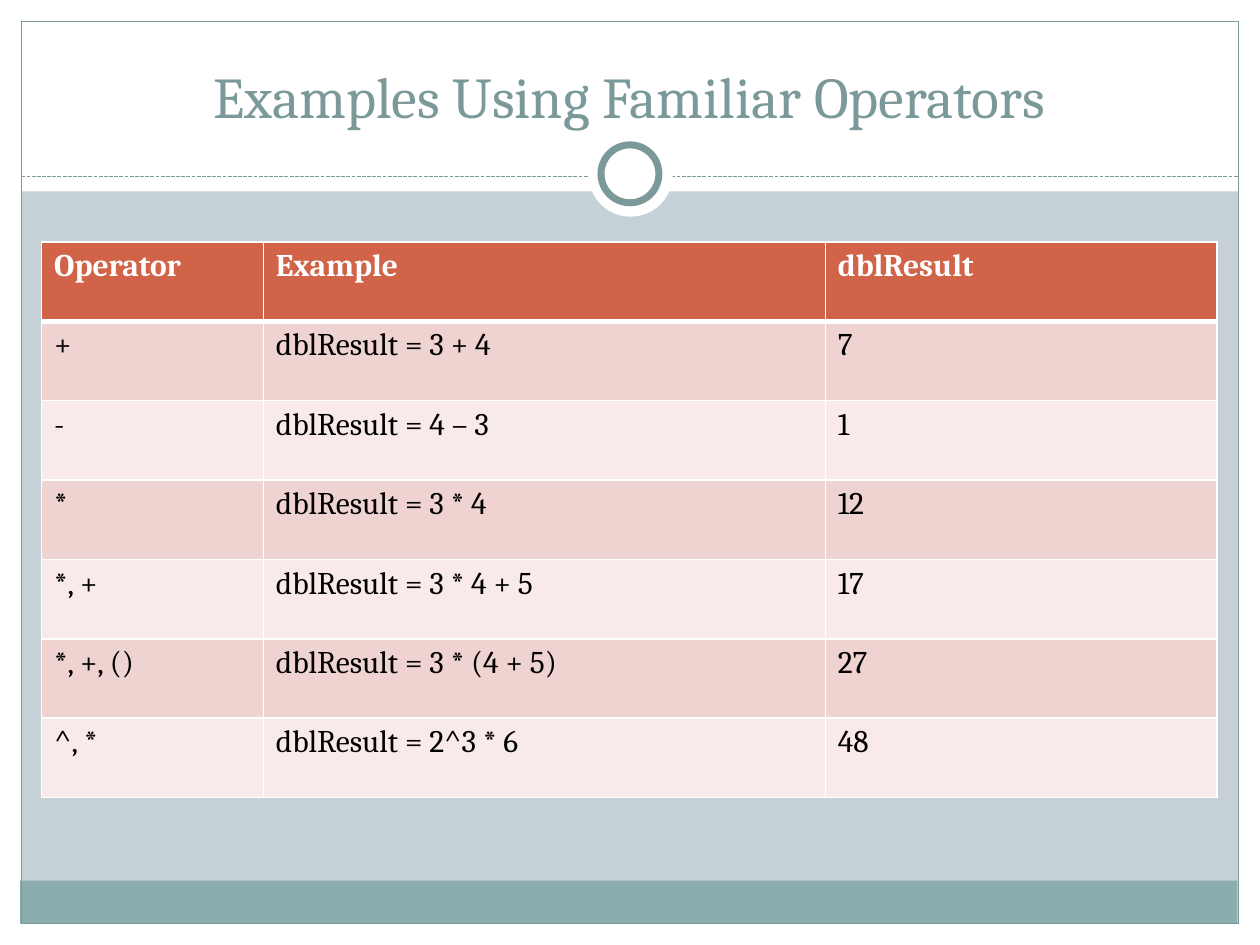
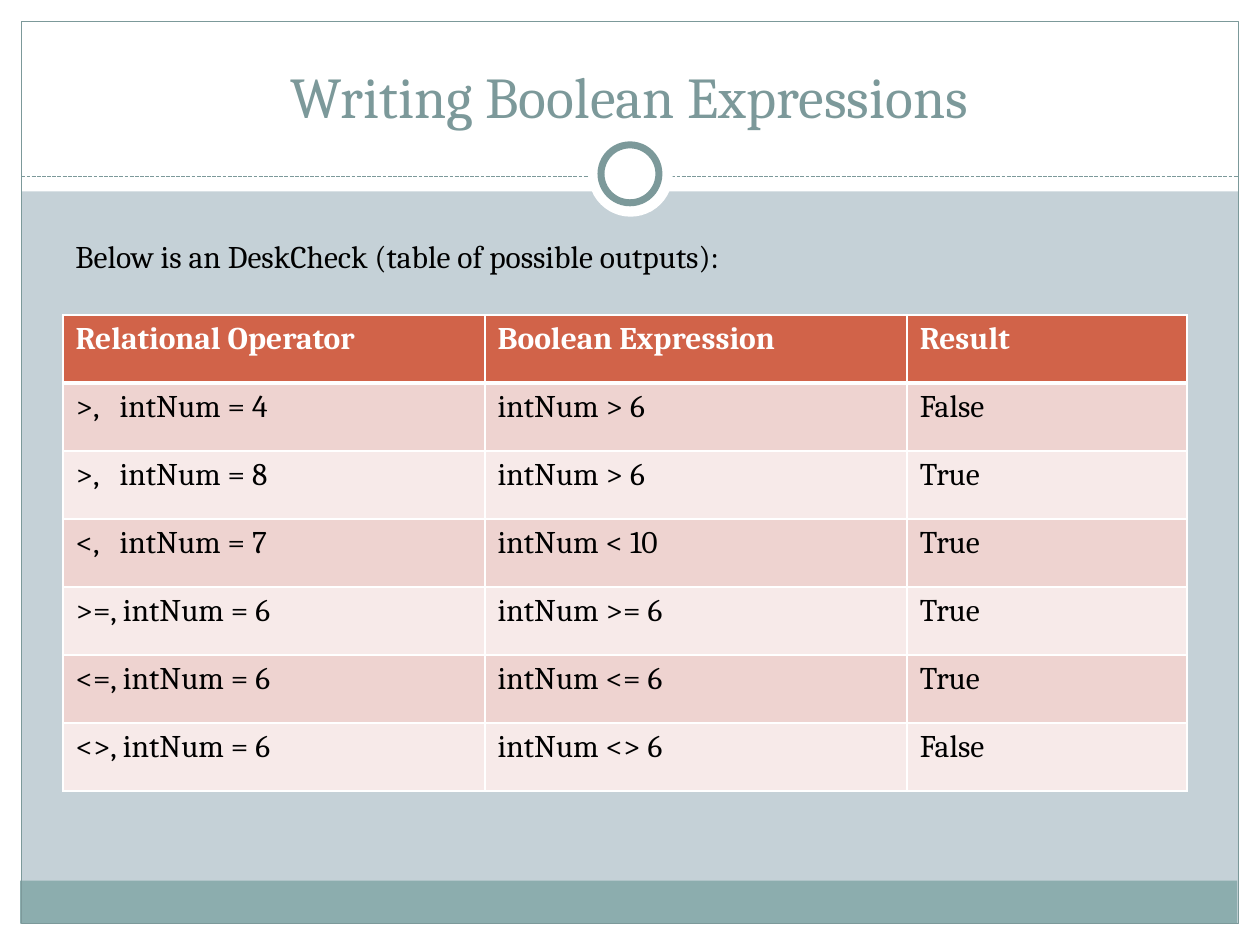
"""Build two slides with tables of arithmetic and relational operators."""
from lxml.etree import SubElement
from pptx import Presentation
from pptx.dml.color import RGBColor
from pptx.enum.dml import MSO_LINE
from pptx.enum.shapes import MSO_CONNECTOR, MSO_SHAPE
from pptx.enum.text import MSO_ANCHOR, MSO_AUTO_SIZE, PP_ALIGN
from pptx.oxml import parse_xml
from pptx.oxml.ns import nsdecls, qn
from pptx.util import Inches, Pt

FONT = "Cambria"
WHITE = RGBColor(0xFF, 0xFF, 0xFF)
BLACK = RGBColor(0x00, 0x00, 0x00)
BACKDROP = RGBColor(0xC5, 0xD1, 0xD7)
TEAL = RGBColor(0x7C, 0x99, 0x9A)
FOOTER_TEAL = RGBColor(0x8C, 0xAD, 0xAE)
HEADER_RED = RGBColor(0xD1, 0x63, 0x49)
ROW_TINTS = [RGBColor(0xF7, 0xEA, 0xE9), RGBColor(0xEE, 0xD3, 0xD0)]

DECOR = [
    (MSO_SHAPE.RECTANGLE, (0, 7.33, 10, 0.17), WHITE, None),
    (MSO_SHAPE.RECTANGLE, (0, 0, 10, 1.52), WHITE, None),
    (MSO_SHAPE.RECTANGLE, (0, 0, 0.17, 7.5), WHITE, None),
    (MSO_SHAPE.RECTANGLE, (9.83, 0, 0.17, 7.5), WHITE, None),
    (MSO_SHAPE.RECTANGLE, (0.16, 6.99, 9.66, 0.34), FOOTER_TEAL, None),
    (MSO_SHAPE.RECTANGLE, (0.17, 0.17, 9.66, 7.16), None, 0.75),
    (MSO_SHAPE.OVAL, (4.67, 1.05, 0.67, 0.67), WHITE, None),
    (MSO_SHAPE.OVAL, (4.77, 1.15, 0.46, 0.46), WHITE, 4),
]

SLIDES = [
    {
        "title": "Examples Using Familiar Operators",
        "intro": None,
        "origin": (0.33, 1.92),
        "columns": [1.76, 4.46, 3.11],
        "row_height": 0.63,
        "rows": [
            ("Operator", "Example", "dblResult"),
            ("+", "dblResult = 3 + 4", "7"),
            ("-", "dblResult = 4 – 3", "1"),
            ("*", "dblResult = 3 * 4", "12"),
            ("*, +", "dblResult = 3 * 4 + 5", "17"),
            ("*, +, ()", "dblResult = 3 * (4 + 5)", "27"),
            ("^, *", "dblResult = 2^3 * 6", "48"),
        ],
    },
    {
        "title": "Writing Boolean Expressions",
        "intro": "Below is an DeskCheck (table of possible outputs):",
        "origin": (0.5, 2.5),
        "columns": [3.35, 3.35, 2.22],
        "row_height": 0.54,
        "rows": [
            ("Relational Operator", "Boolean Expression", "Result"),
            (">,\tintNum = 4", "intNum > 6", "False"),
            (">,\tintNum = 8", "intNum > 6", "True"),
            ("<,\tintNum = 7", "intNum < 10", "True"),
            (">=, intNum = 6", "intNum >= 6", "True"),
            ("<=, intNum = 6", "intNum <= 6", "True"),
            ("<>, intNum = 6", "intNum <> 6", "False"),
        ],
    },
]


def add_run(paragraph, text, size, color, bold=False):
    run = paragraph.add_run()
    run.text = text
    run.font.name = FONT
    run.font.size = Pt(size)
    run.font.bold = bold
    run.font.color.rgb = color


def set_borders(cell, widths):
    properties = cell._tc.get_or_add_tcPr()
    for position, (side, width) in enumerate(widths.items()):
        properties.insert(position, parse_xml(
            f'<a:ln{side} {nsdecls("a")} w="{Pt(width)}"><a:solidFill>'
            f'<a:srgbClr val="{WHITE}"/></a:solidFill></a:ln{side}>'))


deck = Presentation()
deck.slide_width = Inches(10)
deck.slide_height = Inches(7.5)

layout = deck.slide_layouts[5]
layout.background.fill.solid()
layout.background.fill.fore_color.rgb = BACKDROP
for placeholder in list(layout.placeholders)[1:]:
    layout.shapes.element.remove(placeholder.element)

slides = [deck.slides.add_slide(layout) for _ in SLIDES]

canvas = slides[0].shapes
frame_parts = []
for preset, box, fill, line_width in DECOR:
    part = canvas.add_shape(preset, *map(Inches, box))
    part.shadow.inherit = False
    if fill is None:
        part.fill.background()
    else:
        part.fill.solid()
        part.fill.fore_color.rgb = fill
    if line_width is None:
        part.line.fill.background()
    else:
        part.line.color.rgb = TEAL
        part.line.width = Pt(line_width)
    frame_parts.append(part)

divider = canvas.add_connector(
    MSO_CONNECTOR.STRAIGHT, Inches(0.17), Inches(1.4), Inches(9.83), Inches(1.4))
divider.line.color.rgb = TEAL
divider.line.width = Pt(0.75)
divider.line.dash_style = MSO_LINE.SQUARE_DOT
divider.line._ln.find(qn("a:prstDash")).set("val", "sysDash")
SubElement(divider.element.spPr, qn("a:effectLst"))
frame_parts.insert(-2, divider)
for part in frame_parts:
    layout.shapes.element.append(part.element)

for slide, content in zip(slides, SLIDES):
    title = slide.shapes.title
    title.left, title.top = Inches(0.33), Inches(0.25)
    title.width, title.height = Inches(9.33), Inches(0.83)
    title.text_frame.auto_size = MSO_AUTO_SIZE.NONE
    title.text_frame.vertical_anchor = MSO_ANCHOR.BOTTOM
    heading = title.text_frame.paragraphs[0]
    heading.alignment = PP_ALIGN.CENTER
    add_run(heading, content["title"], 33, TEAL)

    rows, columns = content["rows"], content["columns"]
    left, top = content["origin"]
    operators = slide.shapes.add_table(
        len(rows), len(columns), Inches(left), Inches(top),
        Inches(sum(columns)), Inches(content["row_height"] * len(rows))).table
    for column, width in zip(operators.columns, columns):
        column.width = Inches(width)
    for r, texts in enumerate(rows):
        operators.rows[r].height = Inches(content["row_height"])
        is_header = r == 0
        for c, text in enumerate(texts):
            cell = operators.cell(r, c)
            cell.fill.solid()
            cell.fill.fore_color.rgb = HEADER_RED if is_header else ROW_TINTS[r % 2]
            set_borders(cell, {"L": 1, "R": 1, "T": 3 if r == 1 else 1,
                               "B": 3 if is_header else 1})
            paragraph = cell.text_frame.paragraphs[0]
            if "\t" in text:
                tabs = SubElement(paragraph._p.get_or_add_pPr(), qn("a:tabLst"))
                SubElement(tabs, qn("a:tab"), pos=str(Inches(0.35)), algn="l")
            add_run(paragraph, text, 18, WHITE if is_header else BLACK, is_header)

    if content["intro"]:
        intro = slide.shapes.add_textbox(
            Inches(0.5), Inches(1.83), Inches(8.75), Inches(0.4)).text_frame
        intro.word_wrap = True
        intro.auto_size = MSO_AUTO_SIZE.SHAPE_TO_FIT_TEXT
        add_run(intro.paragraphs[0], content["intro"], 18, BLACK)

deck.save("out.pptx")
